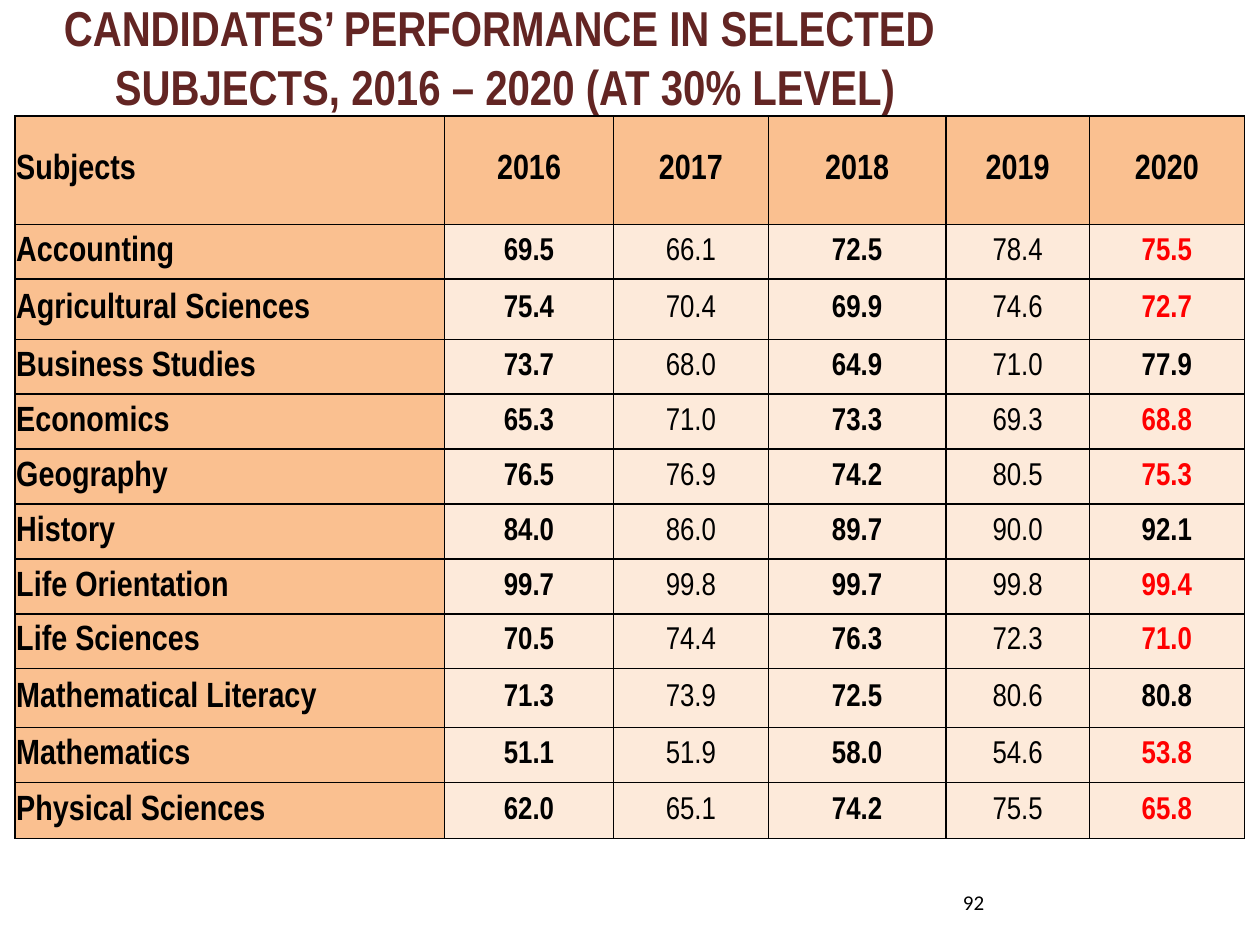
"""Build the slide on candidates' performance in selected subjects."""
from lxml.etree import SubElement as Sub
from pptx import Presentation
from pptx.dml.color import RGBColor
from pptx.enum.text import MSO_ANCHOR as Anchor, MSO_AUTO_SIZE as Fit, PP_ALIGN as Align
from pptx.oxml.ns import qn
from pptx.util import Pt

YEARS = ["2016", "2017", "2018", "2019", "2020"]
MARKS = {
    "Accounting": [69.5, 66.1, 72.5, 78.4, 75.5],
    "Agricultural Sciences": [75.4, 70.4, 69.9, 74.6, 72.7],
    "Business Studies": [73.7, 68.0, 64.9, 71.0, 77.9],
    "Economics": [65.3, 71.0, 73.3, 69.3, 68.8],
    "Geography": [76.5, 76.9, 74.2, 80.5, 75.3],
    "History": [84.0, 86.0, 89.7, 90.0, 92.1],
    "Life Orientation": [99.7, 99.8, 99.7, 99.8, 99.4],
    "Life Sciences": [70.5, 74.4, 76.3, 72.3, 71.0],
    "Mathematical Literacy": [71.3, 73.9, 72.5, 80.6, 80.8],
    "Mathematics": [51.1, 51.9, 58.0, 54.6, 53.8],
    "Physical Sciences": [62.0, 65.1, 74.2, 75.5, 65.8],
}
WIDTHS = [245.5, 96.5, 88.5, 101.5, 82, 88.5]
TALL = {0: 62, 2: 34.3, 9: 33.7, 11: 32}
ROW = 31.4


def color(code):
    return RGBColor.from_string(code)


class Deck:
    """Hold the style and the current slide."""

    face, small = "Arial Narrow", "Calibri"
    ink, brown, red = "000000", "632523", "FF0000"
    dark, pale = "FAC090", "FDEADA"

    def __init__(self):
        self.prs = Presentation()
        self.prs.slide_width, self.prs.slide_height = Pt(720), Pt(540)
        self.slide = self.prs.slides.add_slide(self.prs.slide_layouts[5])

    def text(self, frame, words, size, code, bold=False, align=Align.CENTER, face=None):
        frame.text = words
        for para in frame.paragraphs:
            para.alignment = align
            font = para.font
            font.name, font.size, font.bold = face or self.face, Pt(size), bold
            font.color.rgb = color(code)

    def title(self, words, left, top, width, height):
        shape = self.slide.shapes.title
        shape.left, shape.top, shape.width, shape.height = map(Pt, (left, top, width, height))
        frame = shape.text_frame
        frame.auto_size, frame.vertical_anchor = Fit.NONE, Anchor.MIDDLE
        self.text(frame, words, 28, self.brown, True)

    def number(self, words, left, top, width, height):
        box = self.slide.shapes.add_textbox(*map(Pt, (left, top, width, height)))
        frame = box.text_frame
        frame.word_wrap, frame.vertical_anchor = True, Anchor.MIDDLE
        self.text(frame, words, 12, self.ink, align=Align.RIGHT, face=self.small)

    def cell(self, cell, words, size, code, bold, align, fill):
        cell.margin_left = cell.margin_right = cell.margin_top = Pt(0.7)
        cell.margin_bottom = Pt(0)
        cell.vertical_anchor = Anchor.MIDDLE
        self.text(cell.text_frame, words, size, code, bold, align)
        props = cell._tc.get_or_add_tcPr()
        for side in ("a:lnL", "a:lnR", "a:lnT", "a:lnB"):
            line = Sub(props, qn(side), w=str(Pt(1)))
            Sub(Sub(line, qn("a:solidFill")), qn("a:srgbClr"), val=self.ink)
        cell.fill.solid()
        cell.fill.fore_color.rgb = color(fill)

    def table(self, years, marks, left, top):
        highs = [TALL.get(i, ROW) for i in range(len(marks) + 1)]
        size = sum(WIDTHS), sum(highs)
        grid = self.slide.shapes.add_table(
            len(highs), len(WIDTHS), *map(Pt, (left, top, *size))).table
        for col, width in zip(grid.columns, WIDTHS):
            col.width = Pt(width)
        for row, high in zip(grid.rows, highs):
            row.height = Pt(high)
        for j, head in enumerate(["Subjects", *years]):
            align = Align.CENTER if j else Align.LEFT
            self.cell(grid.cell(0, j), head, 20, self.ink, True, align, self.dark)
        for i, (name, vals) in enumerate(marks.items(), 1):
            self.cell(grid.cell(i, 0), name, 20, self.ink, True, Align.LEFT, self.dark)
            for j, val in enumerate(vals, 1):
                fell = j == len(vals) and val < vals[-2]
                code = self.red if fell else self.ink
                self.cell(grid.cell(i, j), f"{val:.1f}", 18, code, j % 2 == 1,
                          Align.CENTER, self.pale)


def main():
    deck = Deck()
    deck.title("CANDIDATES’ PERFORMANCE IN SELECTED \vSUBJECTS, 2016 – 2020 (AT 30% LEVEL)",
               25, 3.6, 527, 57)
    deck.table(YEARS, MARKS, 8.6, 66.2)
    deck.number("92", 530, 497, 39.5, 36.7)
    deck.prs.save("out.pptx")


if __name__ == "__main__":
    main()
